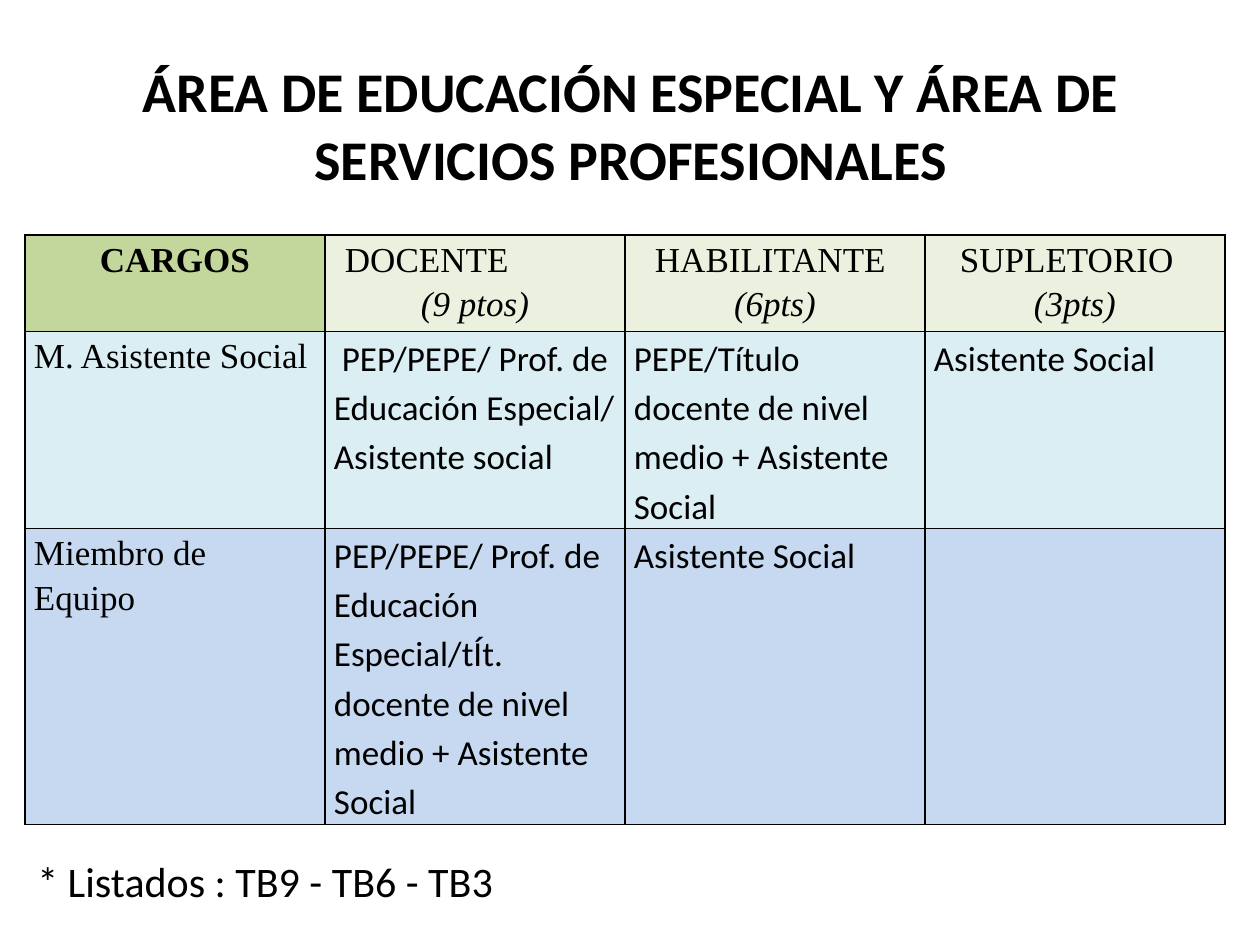
import pptx
import pptx.dml.color
import pptx.enum.text
import pptx.oxml
import pptx.oxml.ns
import pptx.util

PX = 914400 / 126
ALIGN = pptx.enum.text.PP_ALIGN
ANCHOR = pptx.enum.text.MSO_ANCHOR
SERIF = "Times New Roman"
SANS = "Calibri"

HEADERS = [("DOCENTE", "(9 ptos)", 11), ("HABILITANTE", "(6pts)", 21), ("SUPLETORIO", "(3pts)", 26)]
POSITIONS = [
    ("DBEEF4", ["M. Asistente Social",
                " PEP/PEPE/ Prof. de Educación Especial/ Asistente social",
                "PEPE/Título docente de nivel medio + Asistente Social",
                "Asistente Social"]),
    ("C6D9F1", ["Miembro de Equipo",
                "PEP/PEPE/ Prof. de Educación Especial/tÍt. docente de nivel medio + Asistente Social",
                "Asistente Social",
                ""]),
]


def px(length):
    return pptx.util.Emu(round(length * PX))


def color(code):
    return pptx.dml.color.RGBColor.from_string(code)


def write(para, text, font=SANS, size=20, bold=False, italic=False,
          align=ALIGN.LEFT, spacing=None, indent=0):
    para.alignment = align
    if spacing:
        para.line_spacing = spacing
    if indent:
        properties = para._p.get_or_add_pPr()
        properties.set("marL", str(px(indent)))
        properties.set("indent", "0")
    if not text:
        para.font.size = pptx.util.Pt(size)
        return
    span = para.add_run()
    span.text = text
    span.font.name = font
    span.font.size = pptx.util.Pt(size)
    span.font.bold = bold
    span.font.italic = italic
    span.font.color.rgb = color("000000")


def add_text(page, bounds, text, anchor=ANCHOR.TOP, **style):
    frame = page.shapes.add_textbox(*map(px, bounds)).text_frame
    frame.word_wrap = True
    frame.vertical_anchor = anchor
    write(frame.paragraphs[0], text, **style)


def format_cell(cell, fill):
    cell.margin_left = cell.margin_right = px(9)
    cell.margin_top = cell.margin_bottom = 0
    cell.fill.solid()
    cell.fill.fore_color.rgb = color(fill)
    properties = cell._tc.get_or_add_tcPr()
    for index, side in enumerate("LRTB"):
        border = pptx.oxml.parse_xml(
            f'<a:ln{side} {pptx.oxml.ns.nsdecls("a")} w="12700"><a:solidFill>'
            f'<a:srgbClr val="000000"/></a:solidFill></a:ln{side}>')
        properties.insert(index, border)


def add_positions_table(page, bounds, row_heights):
    column_count = len(HEADERS) + 1
    table = page.shapes.add_table(len(row_heights), column_count, *map(px, bounds)).table
    for column in table.columns:
        column.width = px(bounds[2] / column_count)
    for row, height in zip(table.rows, row_heights):
        row.height = px(height)

    corner = table.cell(0, 0)
    format_cell(corner, "C3D69B")
    write(corner.text_frame.paragraphs[0], "CARGOS", font=SERIF, bold=True,
          align=ALIGN.CENTER, spacing=1.15)
    for column, (name, points, indent) in enumerate(HEADERS, 1):
        cell = table.cell(0, column)
        format_cell(cell, "EBF1DE")
        frame = cell.text_frame
        write(frame.paragraphs[0], name, font=SERIF, spacing=1.15, indent=indent)
        write(frame.add_paragraph(), points, font=SERIF, italic=True,
              align=ALIGN.CENTER, spacing=1.15)

    for row, (fill, texts) in enumerate(POSITIONS, 1):
        for column, text in enumerate(texts):
            cell = table.cell(row, column)
            format_cell(cell, fill)
            write(cell.text_frame.paragraphs[0], text,
                  font=SANS if column else SERIF, spacing=1.15)


def main():
    deck = pptx.Presentation()
    deck.slide_width, deck.slide_height = px(1260), px(945)
    page = deck.slides.add_slide(deck.slide_layouts[6])
    add_text(page, (64, 45, 1134, 158),
             "ÁREA DE EDUCACIÓN ESPECIAL Y ÁREA DE SERVICIOS PROFESIONALES",
             anchor=ANCHOR.MIDDLE, size=32, bold=True, align=ALIGN.CENTER)
    add_positions_table(page, (25, 235, 1200, 581), (88, 197, 296))
    add_text(page, (25, 849, 1200, 63), "* Listados : TB9 - TB6 - TB3", size=24)
    deck.save("out.pptx")


if __name__ == "__main__":
    main()
